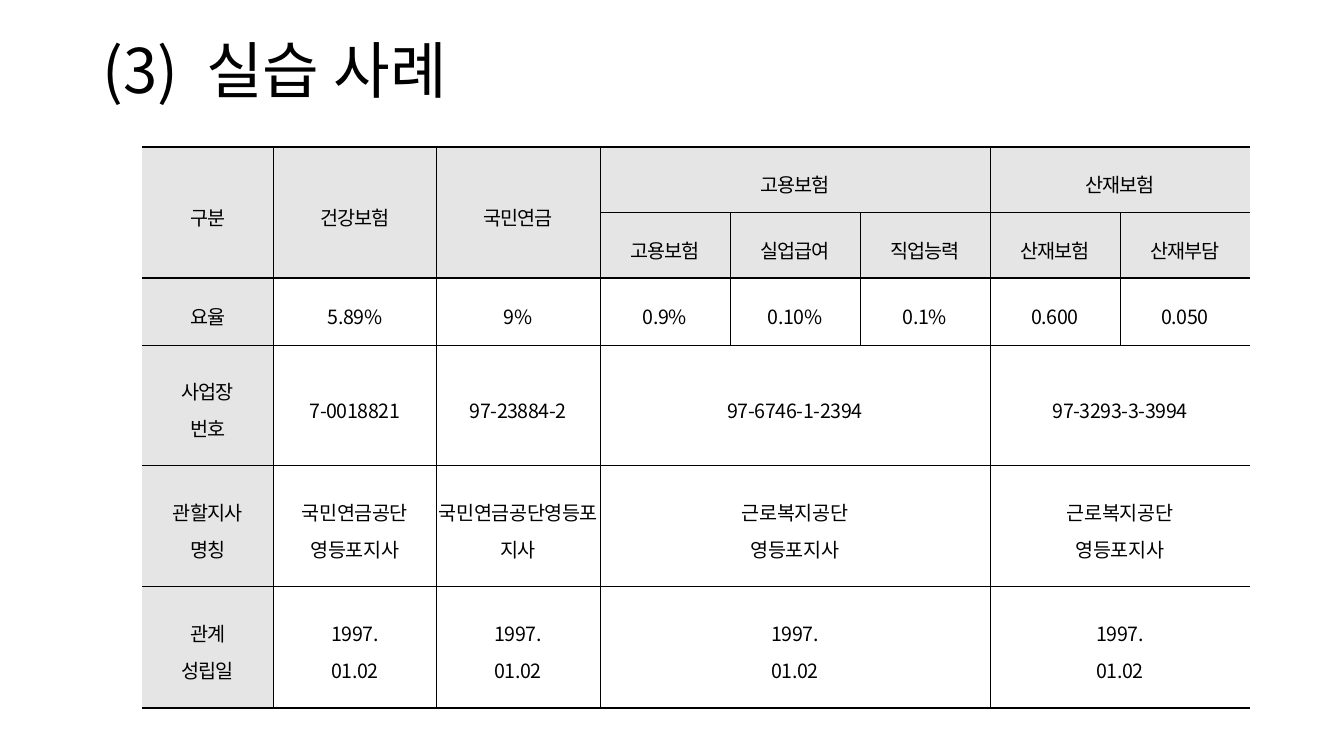
from lxml import etree
from pptx import Presentation
from pptx.dml.color import RGBColor
from pptx.enum.text import MSO_ANCHOR as Anchor, PP_ALIGN as Align
from pptx.oxml.ns import qn
from pptx.util import Inches, Pt

FONT = "Noto Sans CJK KR"
BLACK, GRAY = "000000", "E5E5E5"
THIN, MEDIUM, THICK = 0.28, 1.7, 1.98


def style_span(span, size, spacing=0):
    """Set font, size, colour and letter spacing (hundredths of a point)."""
    span.font.name = FONT
    span.font.size = Pt(size)
    span.font.color.rgb = RGBColor.from_string(BLACK)
    properties = span.font._element
    properties.set("spc", str(spacing))
    etree.SubElement(properties, qn("a:ea"), typeface=FONT)


def add_border(cell, side, width):
    """Draw one cell edge; a width of 0 hides it."""
    line = etree.SubElement(cell._tc.get_or_add_tcPr(), qn(f"a:ln{side}"), w=str(Pt(width)))
    if width:
        fill = etree.SubElement(line, qn("a:solidFill"))
        etree.SubElement(fill, qn("a:srgbClr"), val=BLACK)
    else:
        etree.SubElement(line, qn("a:noFill"))


deck = Presentation()
deck.slide_width, deck.slide_height = Inches(13.33), Inches(7.5)
page = deck.slides.add_slide(deck.slide_layouts[6])

title_box = page.shapes.add_textbox(Inches(0.92), Inches(0.4), Inches(11.5), Inches(1.45))
title_frame = title_box.text_frame
title_frame.word_wrap = True
title_frame.vertical_anchor = Anchor.MIDDLE
title_frame.margin_top, title_frame.margin_bottom = 0, Inches(0.79)
title_frame.text = "(3)  실습 사례"
title_para = title_frame.paragraphs[0]
title_para.line_spacing = 0.9
style_span(title_para.runs[0], 44)

column_widths = [1.3, 1.62, 1.62] + [1.29] * 5
row_heights = [0.65, 0.65, 0.66] + [1.2] * 3
# None marks a cell covered by a merge
rows = [
    ["구분", "건강보험", "국민연금", "고용보험", None, None, "산재보험", None],
    [None, None, None, "고용보험", "실업급여", "직업능력", "산재보험", "산재부담"],
    ["요율", "5.89%", "9%", "0.9%", "0.10%", "0.1%", "0.600", "0.050"],
    ["사업장\n번호", "7-0018821", "97-23884-2", "97-6746-1-2394", None, None,
     "97-3293-3-3994", None],
    ["관할지사\n명칭", "국민연금공단\n영등포지사", "국민연금공단영등포지사",
     "근로복지공단\n영등포지사", None, None, "근로복지공단\n영등포지사", None],
    ["관계\n성립일", "1997.\n01.02", "1997.\n01.02", "1997.\n01.02", None, None,
     "1997.\n01.02", None],
]
edge_widths = [MEDIUM, THIN, THICK, THIN, THIN, THIN, MEDIUM]

table = page.shapes.add_table(
    len(rows), len(column_widths), Inches(1.41), Inches(1.46),
    Inches(sum(column_widths)), Inches(sum(row_heights))).table
table.first_row = table.horz_banding = False
for column, width in zip(table.columns, column_widths):
    column.width = Inches(width)
for row, height in zip(table.rows, row_heights):
    row.height = Inches(height)

for column in range(3):
    table.cell(0, column).merge(table.cell(1, column))
for row in (0, 3, 4, 5):
    table.cell(row, 3).merge(table.cell(row, 5))
    table.cell(row, 6).merge(table.cell(row, 7))

for r, texts in enumerate(rows):
    for c, text in enumerate(texts):
        cell = table.cell(r, c)
        if text is None:
            cell.fill.background()
            continue
        is_label = r < 2 or c == 0
        bottom, right = r + cell.span_height, c + cell.span_width
        add_border(cell, "L", THIN if c else 0)
        add_border(cell, "R", THIN if right < len(texts) else 0)
        add_border(cell, "T", edge_widths[r])
        add_border(cell, "B", edge_widths[bottom])
        if is_label:
            cell.fill.solid()
            cell.fill.fore_color.rgb = RGBColor.from_string(GRAY)
        else:
            cell.fill.background()
        cell.vertical_anchor = Anchor.MIDDLE
        cell.margin_left = cell.margin_right = Inches(0.02)
        cell.margin_top = cell.margin_bottom = Inches(0.02)
        cell.text_frame.text = text
        for para in cell.text_frame.paragraphs:
            para.alignment = Align.CENTER
            para.line_spacing = 1.3
            style_span(para.runs[0], 14, -70 if is_label else -30)

deck.save("out.pptx")
